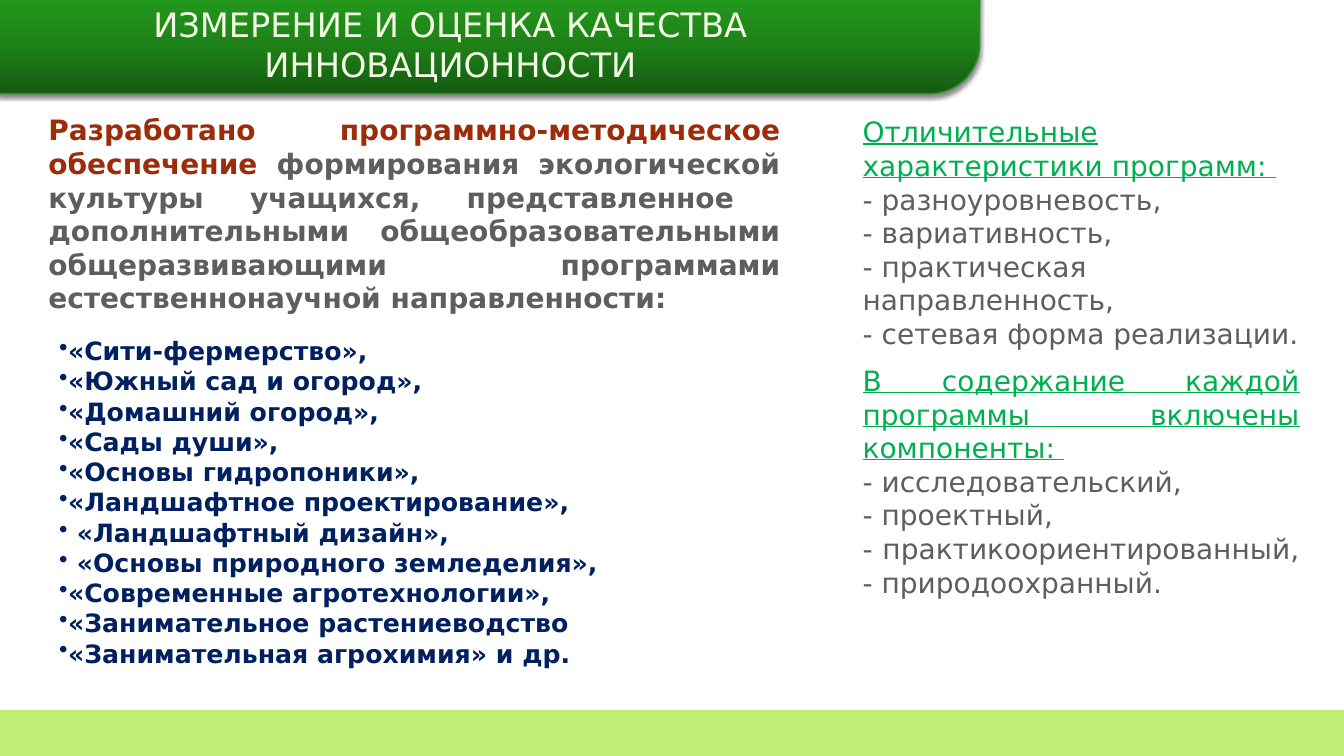
from dataclasses import dataclass, field

from lxml.etree import fromstring
from pptx import Presentation
from pptx.dml.color import RGBColor
from pptx.enum.shapes import MSO_SHAPE
from pptx.enum.text import MSO_ANCHOR, MSO_AUTO_SIZE, PP_ALIGN
from pptx.oxml.ns import qn
from pptx.util import Cm, Pt

COLORS = {
    "dark": "155B11", "mid": "1E8218", "light": "239A1C", "edge": "2A9224",
    "lime": "C1EC76", "cream": "F2FBE3", "rust": "9D2D0A", "gray": "5E5E5E",
    "navy": "002060", "green": "00B050", "black": "000000",
}
FONT = "DejaVu Sans"
SPACE = 'xmlns:a="http://schemas.openxmlformats.org/drawingml/2006/main"'
FRAME = {"word_wrap": True, "auto_size": MSO_AUTO_SIZE.SHAPE_TO_FIT_TEXT,
         "vertical_anchor": MSO_ANCHOR.TOP}


@dataclass
class Run:
    text: str
    color: str
    look: dict = field(default_factory=dict)


@dataclass
class Para:
    runs: list[Run]
    form: dict = field(default_factory=dict)
    bullet: bool = False


@dataclass
class Box:
    place: tuple[float, float, float, float]
    size: int
    paras: list[Para]


@dataclass
class Band:
    kind: MSO_SHAPE
    place: tuple[float, float, float, float]
    fill: str
    line: str
    width: float


def apply(target, form: dict) -> None:
    for name, value in form.items():
        setattr(target, name, value)


def paint(name: str) -> RGBColor:
    return RGBColor.from_string(COLORS[name])


def draw_band(slide, band: Band):
    shape = slide.shapes.add_shape(band.kind, *map(Cm, band.place))
    shape.shadow.inherit = False
    shape.fill.solid()
    shape.fill.fore_color.rgb = paint(band.fill)
    shape.line.color.rgb = paint(band.line)
    shape.line.width = Pt(band.width)
    return shape


def shade_head(shape) -> None:
    """Mirror the header, then give it a gradient and a shadow."""
    shape.adjustments[0] = 0.5
    shape.rotation = 180
    props = shape.element.spPr
    props.find(qn("a:xfrm")).set("flipH", "1")
    stops = "".join(
        f'<a:gs pos="{pos * 1000}"><a:srgbClr val="{COLORS[name]}"/></a:gs>'
        for pos, name in ((0, "dark"), (50, "mid"), (100, "light")))
    props.replace(props.find(qn("a:solidFill")), fromstring(
        f'<a:gradFill {SPACE} rotWithShape="1"><a:gsLst>{stops}</a:gsLst>'
        '<a:lin ang="5400000" scaled="0"/></a:gradFill>'))
    props.find(qn("a:effectLst")).append(fromstring(
        f'<a:outerShdw {SPACE} blurRad="{Pt(3)}" dist="{Pt(2)}" dir="5400000" '
        f'rotWithShape="0"><a:srgbClr val="{COLORS["black"]}">'
        '<a:alpha val="45000"/></a:srgbClr></a:outerShdw>'))


def draw_box(slide, box: Box) -> None:
    frame = slide.shapes.add_textbox(*map(Cm, box.place)).text_frame
    apply(frame, FRAME)
    for num, para in enumerate(box.paras):
        line = frame.add_paragraph() if num else frame.paragraphs[0]
        apply(line, para.form)
        if para.bullet:
            line._p.get_or_add_pPr().append(
                fromstring(f'<a:buChar {SPACE} char="•"/>'))
        for item in para.runs:
            run = line.add_run()
            run.text = item.text
            apply(run.font, {"name": FONT, "size": Pt(box.size)} | item.look)
            run.font.color.rgb = paint(item.color)


# Formats
BOLD = {"bold": True}
UNDER = {"underline": True}
MIDDLE = {"alignment": PP_ALIGN.CENTER}
EVEN = {"alignment": PP_ALIGN.JUSTIFY}
LEFT = {"alignment": PP_ALIGN.LEFT}

# Bands
HEAD = Band(MSO_SHAPE.ROUND_1_RECTANGLE, (-0.05, -0.15, 24.74, 2.51),
            "mid", "edge", 1)
FOOT = Band(MSO_SHAPE.RECTANGLE, (-0.05, 17.93, 33.93, 1.12),
            "lime", "lime", 1.5)

# Texts
COURSES = [
    "«Сити-фермерство», ", "«Южный сад и огород», ", "«Домашний огород», ",
    "«Сады души», ", "«Основы гидропоники»,", "«Ландшафтное проектирование»,",
    " «Ландшафтный дизайн»,", " «Основы природного земледелия»,",
    "«Современные агротехнологии»,", "«Занимательное растениеводство",
    "«Занимательная агрохимия» и др. ",
]
TRAITS = ["- разноуровневость,", "- вариативность,",
          "- практическая направленность,", "- сетевая форма реализации."]
PARTS = ["- исследовательский,", "- проектный, ",
         "- практикоориентированный, ", "- природоохранный."]

BOXES = [
    Box((3.35, -0.03, 16, 2.31), 24, [
        Para([Run("ИЗМЕРЕНИЕ И ОЦЕНКА КАЧЕСТВА ИННОВАЦИОННОСТИ", "cream")],
             MIDDLE)]),
    Box((0.97, 2.72, 18.95, 7.09), 20, [
        Para([Run("Разработано программно-методическое обеспечение ",
                  "rust", BOLD),
              Run("формирования экологической культуры учащихся, "
                  "представленное  дополнительными общеобразовательными "
                  "общеразвивающими программами естественнонаучной "
                  "направленности: ", "gray", BOLD)], EVEN)]),
    Box((1.24, 8.33, 16.28, 8.71), 18, [
        Para([Run(name, "navy", BOLD)], EVEN, True) for name in COURSES]),
    Box((21.49, 2.77, 11.51, 12.78), 20, [
        Para([Run("Отличительные характеристики программ: ",
                  "green", UNDER)], EVEN),
        *(Para([Run(text, "gray")], LEFT) for text in TRAITS),
        Para([Run("В содержание каждой программы включены компоненты: ",
                  "green", UNDER)], EVEN | {"space_before": Pt(9.5)}),
        *(Para([Run(text, "gray")], EVEN) for text in PARTS)]),
]


def main() -> None:
    deck = Presentation()
    apply(deck, {"slide_width": Cm(33.87), "slide_height": Cm(19.05)})
    slide = deck.slides.add_slide(deck.slide_layouts[6])
    shade_head(draw_band(slide, HEAD))
    draw_band(slide, FOOT)
    for box in BOXES:
        draw_box(slide, box)
    deck.save("out.pptx")


if __name__ == "__main__":
    main()
